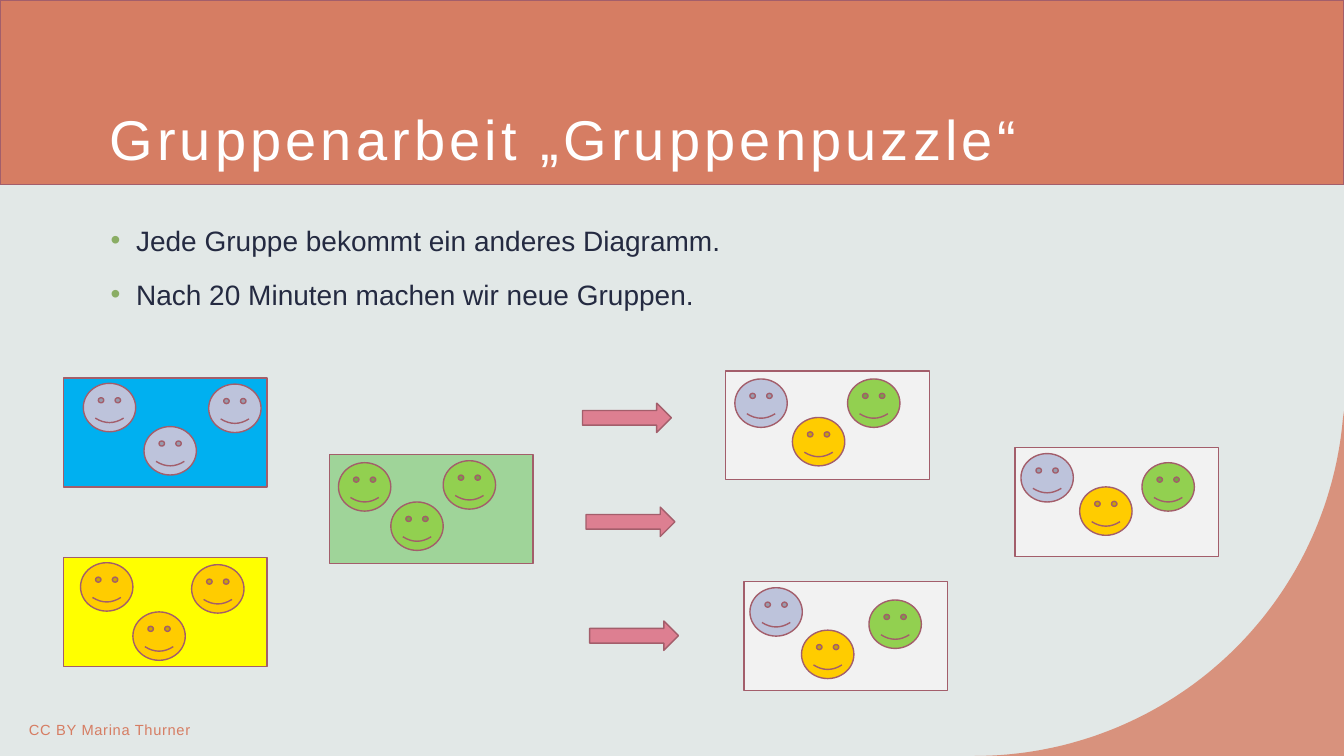
import math
from dataclasses import dataclass

import pptx
import pptx.dml.color
import pptx.enum.shapes
import pptx.enum.text
import pptx.oxml
import pptx.oxml.ns
import pptx.util
from pptx.util import Cm

SHAPE = pptx.enum.shapes.MSO_SHAPE
ANCHOR = pptx.enum.text.MSO_ANCHOR


@dataclass(frozen=True)
class Theme:
    font: str = "Arial"
    title_size: float = 40
    body_size: float = 20
    credit_size: float = 10.5
    background: str = "E2E8E7"
    accent: str = "D67D63"
    outline: str = "A35E6B"
    title_text: str = "FFFFFF"
    body_text: str = "242A41"
    bullet: str = "8AAD64"
    arrow: str = "DD7F91"
    blue_table: str = "00B0F0"
    yellow_table: str = "FFFF00"
    green_table: str = "9FD499"
    mixed_table: str = "F2F2F2"
    blue_face: str = "BDC3DB"
    yellow_face: str = "FFCC00"
    green_face: str = "92D050"


theme = Theme()


def add_figure(kind, left, top, width, height, fill):
    """Add a preset shape with the common outline; lengths in centimetres."""
    figure = page.shapes.add_shape(kind, Cm(left), Cm(top), Cm(width), Cm(height))
    figure.shadow.inherit = False
    figure.fill.solid()
    figure.fill.fore_color.rgb = pptx.dml.color.RGBColor.from_string(fill)
    figure.line.color.rgb = pptx.dml.color.RGBColor.from_string(theme.outline)
    figure.line.width = pptx.util.Pt(1)


def add_text(left, top, width, height, lines, size, color, anchor, spacing=0):
    """Add a wrapped text box, one paragraph per line; spacing in points."""
    box = page.shapes.add_textbox(Cm(left), Cm(top), Cm(width), Cm(height))
    frame = box.text_frame
    frame.word_wrap = True
    frame.vertical_anchor = anchor
    for index, line in enumerate(lines):
        para = frame.add_paragraph() if index else frame.paragraphs[0]
        span = para.add_run()
        span.text = line
        span.font.name = theme.font
        span.font.size = pptx.util.Pt(size)
        span.font.color.rgb = pptx.dml.color.RGBColor.from_string(color)
        span.font._element.set("spc", str(round(spacing * 100)))
    return frame


deck = pptx.Presentation()
deck.slide_width = Cm(33.87)
deck.slide_height = Cm(19.05)
page = deck.slides.add_slide(deck.slide_layouts[6])
page.background.fill.solid()
page.background.fill.fore_color.rgb = pptx.dml.color.RGBColor.from_string(theme.background)

# Corner: the area outside a quarter circle
center_x, center_y, radius = 24.56, 9.73, 9.32
arc = []
for degree in range(5, 91):
    angle = math.radians(degree)
    arc.append((Cm(center_x + radius * math.cos(angle)),
                Cm(center_y + radius * math.sin(angle))))
outline = page.shapes.build_freeform(Cm(33.87), Cm(10.36))
outline.add_line_segments(arc + [(Cm(33.87), Cm(19.05))], close=True)
corner = outline.convert_to_shape()
corner.shadow.inherit = False
corner.line.fill.background()
corner.fill.solid()
corner.fill.fore_color.rgb = pptx.dml.color.RGBColor.from_string(theme.accent)
corner_color = corner._element.spPr.find(".//" + pptx.oxml.ns.qn("a:srgbClr"))
corner_color.append(pptx.oxml.parse_xml(
    f'<a:alpha {pptx.oxml.ns.nsdecls("a")} val="80000"/>'))

# Title, instructions and credit
add_figure(SHAPE.RECTANGLE, 0, 0, 33.87, 4.65, theme.accent)
add_text(2.51, 1.65, 27.53, 3.68, ["Gruppenarbeit „Gruppenpuzzle“"],
         theme.title_size, theme.title_text, ANCHOR.MIDDLE, spacing=3)
instructions = add_text(
    2.54, 5.33, 27.53, 11.46,
    ["Jede Gruppe bekommt ein anderes Diagramm.",
     "Nach 20 Minuten machen wir neue Gruppen."],
    theme.body_size, theme.body_text, ANCHOR.TOP)
for para in instructions.paragraphs:
    para.line_spacing = 1.2
    para.space_before = pptx.util.Pt(10)
    properties = para._p.get_or_add_pPr()
    properties.set("marL", str(Cm(0.64)))
    properties.set("indent", str(Cm(-0.64)))
    namespace = pptx.oxml.ns.nsdecls("a")
    for bullet_xml in (
        f'<a:buClr {namespace}><a:srgbClr val="{theme.bullet}"/></a:buClr>',
        f'<a:buFont {namespace} typeface="{theme.font}"/>',
        f'<a:buChar {namespace} char="•"/>',
    ):
        properties.append(pptx.oxml.parse_xml(bullet_xml))
add_text(0.48, 17.88, 10.49, 1.02, ["CC BY Marina Thurner"],
         theme.credit_size, theme.accent, ANCHOR.MIDDLE, spacing=0.5)

# Group tables: left, top, fill, face colours, face offsets within the table
blue, yellow, green = theme.blue_face, theme.yellow_face, theme.green_face
mixed = (blue, yellow, green)
groups = [
    (1.6, 9.53, theme.blue_table, (blue,) * 3,
     ((0.5, 0.13), (2.03, 1.22), (3.66, 0.15))),
    (1.6, 14.05, theme.yellow_table, (yellow,) * 3,
     ((0.43, 0.13), (1.75, 1.37), (3.23, 0.18))),
    (8.3, 11.46, theme.green_table, (green,) * 3,
     ((0.23, 0.2), (1.55, 1.19), (2.87, 0.15))),
    (18.29, 9.35, theme.mixed_table, mixed,
     ((0.23, 0.2), (1.68, 1.17), (3.07, 0.2))),
    (25.58, 11.28, theme.mixed_table, mixed,
     ((0.15, 0.15), (1.63, 0.99), (3.2, 0.38))),
    (18.75, 14.66, theme.mixed_table, mixed,
     ((0.15, 0.15), (1.45, 1.22), (3.15, 0.46))),
]
for left, top, fill, face_colors, offsets in groups:
    add_figure(SHAPE.RECTANGLE, left, top, 5.13, 2.74, fill)
    for face_color, (across, down) in zip(face_colors, offsets):
        add_figure(SHAPE.SMILEY_FACE, left + across, top + down, 1.32, 1.22, face_color)

for left, top in ((14.68, 10.16), (14.77, 12.78), (14.86, 15.65)):
    add_figure(SHAPE.RIGHT_ARROW, left, top, 2.24, 0.74, theme.arrow)

deck.save("out.pptx")
